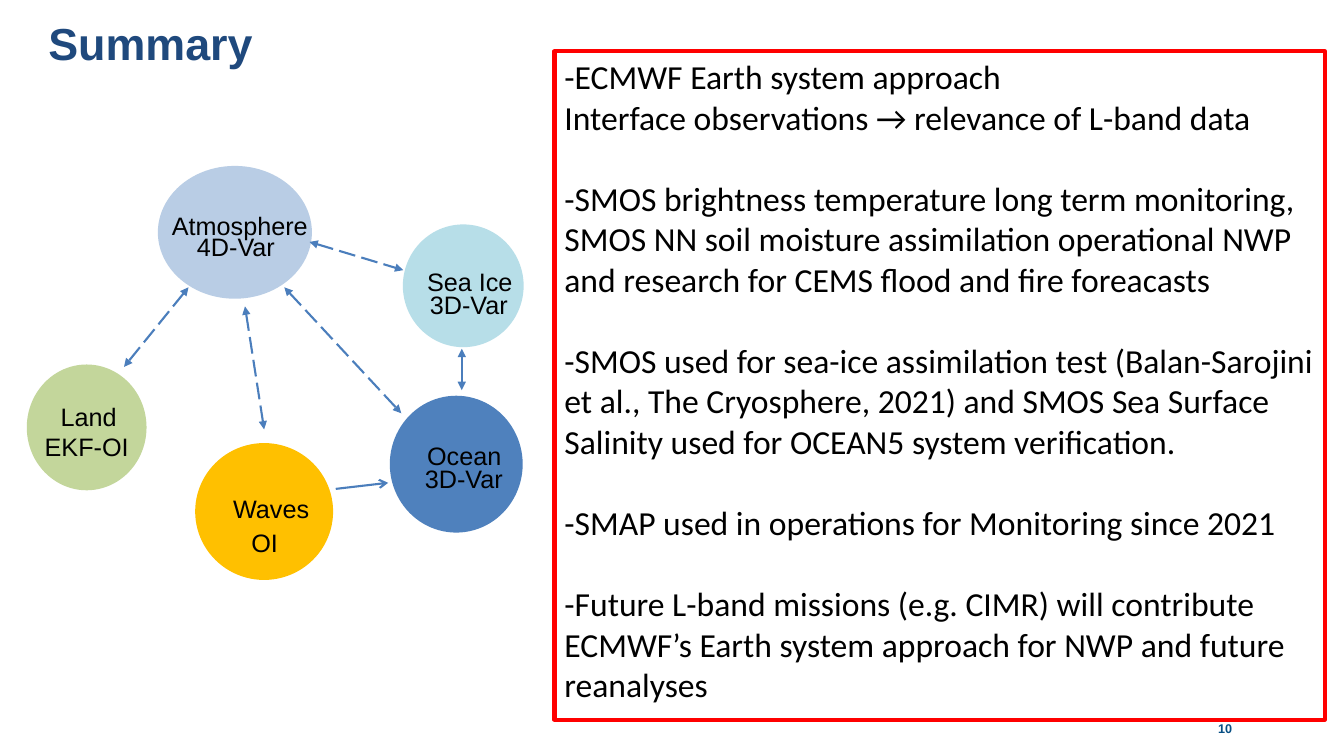
import dataclasses

import lxml.etree
import pptx
import pptx.dml.color
import pptx.enum.dml
import pptx.enum.shapes
import pptx.enum.text
import pptx.oxml.ns
import pptx.util

CELL = 0.1  # inches; the slide is a grid of 133.3 columns by 75 rows
COLUMNS, ROWS = 133.3, 75
ALIGN = pptx.enum.text.PP_ALIGN
ANCHOR = pptx.enum.text.MSO_ANCHOR
SHAPE = pptx.enum.shapes.MSO_SHAPE


@dataclasses.dataclass(frozen=True)
class Theme:
    heading_font: str = "Arial"
    body_font: str = "Calibri"
    title_size: int = 32
    body_size: int = 24
    label_size: int = 18
    page_size: int = 9
    blank_line: float = 29.3
    title: str = "1F497D"
    text: str = "000000"
    page: str = "064E83"
    panel: str = "FFFFFF"
    frame: str = "FF0000"
    arrow: str = "4B7EBC"
    atmosphere: str = "B9CDE5"
    land: str = "C3D69B"
    ocean: str = "4F81BD"
    sea_ice: str = "B7DEE8"
    waves: str = "FFC000"


THEME = Theme()

# fill, circle (left, top, width, height), labels (text, left, top, width)
COMPONENTS = [
    (THEME.atmosphere, (15.8, 16.6, 15, 12.9),
     [("Atmosphere", 16, 20.4, 15.6), ("4D-Var", 18.5, 22.5, 9.8)]),
    (THEME.land, (2.8, 36.3, 11.6, 12.2),
     [("Land", 5, 39.3, 7.6), ("EKF-OI", 3.4, 42.3, 10.4)]),
    (THEME.ocean, (38.8, 39.4, 12.9, 13.3),
     [("Ocean", 41.3, 43.2, 9.5), ("3D-Var", 41.1, 45.5, 9.8)]),
    (THEME.sea_ice, (40.1, 22.4, 11.7, 11.9),
     [("Sea Ice", 41.3, 25.9, 10.6), ("3D-Var", 41.6, 28.2, 9.8)]),
    (THEME.waves, (19.5, 44.1, 13.4, 13.3),
     [("Waves", 22.1, 48.4, 9.6), ("OI", 23.9, 51.8, 4.7)]),
]
LABEL_HEIGHT = 4

WEAK_COUPLINGS = [
    ((30.7, 24), (40, 26.8)),
    ((28.2, 28.5), (39.8, 41)),
    ((24.3, 30.4), (26.2, 42.6)),
    ((18.7, 28.5), (12.3, 36.4)),
]
SEA_ICE_OCEAN = (45.8, 34.6), (45.8, 38.7)
WAVES_OCEAN = (33.3, 48.5), (38.5, 47.9)

# Each topic is a list of paragraphs; topics stand one blank line apart
TOPICS = [
    ["-ECMWF Earth system approach",
     "Interface observations → relevance of L-band data"],
    ["-SMOS brightness temperature long term monitoring, SMOS NN soil moisture "
     "assimilation operational NWP and research for CEMS flood and fire foreacasts"],
    ["-SMOS used for sea-ice assimilation test (Balan-Sarojini et al., The Cryosphere, "
     "2021) and SMOS Sea Surface Salinity used for OCEAN5 system verification."],
    ["-SMAP used in operations for Monitoring since 2021"],
    ["-Future L-band missions (e.g. CIMR) will contribute ECMWF’s Earth system "
     "approach for NWP and future reanalyses"],
]


def grid(*cells):
    return [pptx.util.Inches(cell * CELL) for cell in cells]


def color(value):
    return pptx.dml.color.RGBColor.from_string(value)


def write_text(shape, topics, *, size, font=THEME.heading_font, fill=THEME.text,
               bold=False, align=ALIGN.LEFT, anchor=ANCHOR.TOP, wrap=True,
               inset=None, line_spacing=None):
    frame = shape.text_frame
    frame.word_wrap = wrap
    frame.vertical_anchor = anchor
    if inset is not None:
        frame.margin_left = frame.margin_right = inset
        frame.margin_top = frame.margin_bottom = inset
    lines = [(text, index > 0 and text is topic[0])
             for index, topic in enumerate(topics) for text in topic]
    for number, (text, starts_topic) in enumerate(lines):
        paragraph = frame.add_paragraph() if number else frame.paragraphs[0]
        paragraph.text = text
        paragraph.alignment = align
        paragraph.space_before = pptx.util.Pt(THEME.blank_line if starts_topic else 0)
        if line_spacing:
            paragraph.line_spacing = pptx.util.Pt(line_spacing)
        paragraph.font.name = font
        paragraph.font.size = pptx.util.Pt(size)
        paragraph.font.bold = bold
        paragraph.font.color.rgb = color(fill)


def add_shape(slide, kind, box, fill, line, line_width):
    shape = slide.shapes.add_shape(kind, *grid(*box))
    shape.shadow.inherit = False
    shape.fill.solid()
    shape.fill.fore_color.rgb = color(fill)
    shape.line.color.rgb = color(line)
    shape.line.width = pptx.util.Pt(line_width)
    return shape


def add_title(slide, text):
    title = slide.shapes.title
    title.left, title.top, title.width, title.height = grid(4.8, 3, COLUMNS - 9.6, 4.4)
    write_text(title, [[text]], size=THEME.title_size, fill=THEME.title, bold=True,
               inset=0, line_spacing=28)


def add_component(slide, fill, circle, labels):
    add_shape(slide, SHAPE.OVAL, circle, fill, fill, 2)
    for text, left, top, width in labels:
        label = slide.shapes.add_textbox(*grid(left, top, width, LABEL_HEIGHT))
        write_text(label, [[text]], size=THEME.label_size, align=ALIGN.CENTER, wrap=False)


def add_arrow(slide, start, end, head="triangle", tail="triangle", dashed=False):
    arrow = slide.shapes.add_connector(
        pptx.enum.shapes.MSO_CONNECTOR.STRAIGHT, *grid(*start, *end))
    arrow.line.color.rgb = color(THEME.arrow)
    arrow.line.width = pptx.util.Pt(1.5)
    if dashed:
        arrow.line.dash_style = pptx.enum.dml.MSO_LINE.LONG_DASH
    qualified = pptx.oxml.ns.qn
    properties = arrow.element.spPr
    outline = properties.find(qualified("a:ln"))
    for tag, style in (("a:headEnd", head), ("a:tailEnd", tail)):
        lxml.etree.SubElement(outline, qualified(tag), type=style)
    lxml.etree.SubElement(properties, qualified("a:effectLst"))


def add_page_number(slide, number):
    box = slide.shapes.add_textbox(*grid(COLUMNS - 23.6, 70.6, 23.6, 2.4))
    write_text(box, [[str(number)]], size=THEME.page_size, fill=THEME.page, bold=True,
               align=ALIGN.CENTER, anchor=ANCHOR.BOTTOM, inset=0)


def add_summary_panel(slide, topics):
    panel = add_shape(slide, SHAPE.RECTANGLE, (55, 5.1, 76.4, 66.3),
                      THEME.panel, THEME.frame, 3)
    write_text(panel, topics, size=THEME.body_size, font=THEME.body_font)


def main():
    presentation = pptx.Presentation()
    presentation.slide_width, presentation.slide_height = grid(COLUMNS, ROWS)
    slide = presentation.slides.add_slide(presentation.slide_layouts[5])
    add_title(slide, "Summary")
    for fill, circle, labels in COMPONENTS:
        add_component(slide, fill, circle, labels)
    for start, end in WEAK_COUPLINGS:
        add_arrow(slide, start, end, dashed=True)
    add_arrow(slide, *SEA_ICE_OCEAN)
    add_arrow(slide, *WAVES_OCEAN, head="none", tail="arrow")
    add_page_number(slide, 10)
    add_summary_panel(slide, TOPICS)
    presentation.save("out.pptx")


if __name__ == "__main__":
    main()
